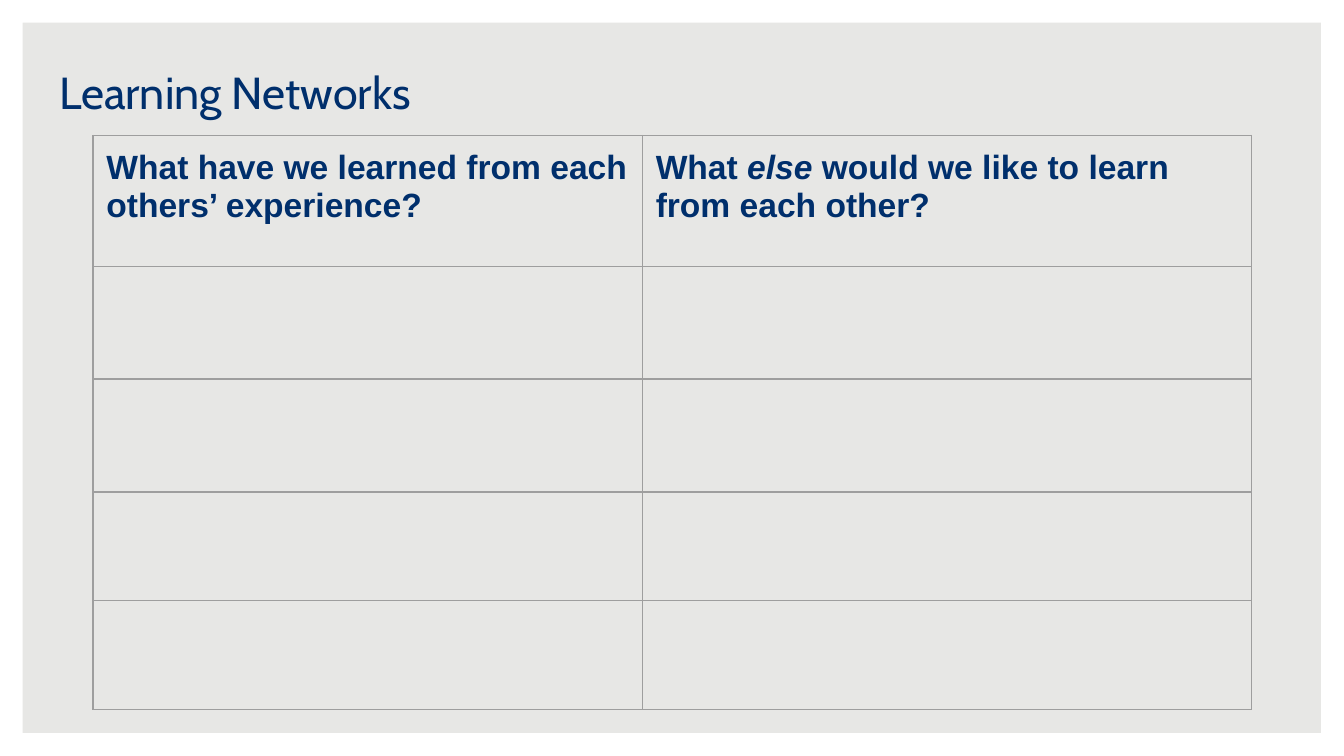
from dataclasses import dataclass

from lxml import etree
from pptx import Presentation
from pptx.dml.color import RGBColor
from pptx.enum.shapes import MSO_SHAPE
from pptx.enum.text import MSO_ANCHOR, MSO_AUTO_SIZE, PP_ALIGN
from pptx.oxml.ns import qn
from pptx.util import Pt

FRAME = MSO_SHAPE.FRAME
TOP = MSO_ANCHOR.TOP
LEFT = PP_ALIGN.LEFT
FIXED = MSO_AUTO_SIZE.NONE
WIDE, HIGH = 720, 405


@dataclass(frozen=True)
class Theme:
    back: str = "E7E7E5"
    edge: str = "FFFFFF"
    ink: str = "002F6C"
    rule: str = "9E9E9E"
    head: str = "Cabin"
    text: str = "Arial"
    large: float = 24
    small: float = 18
    inset: float = 7.2
    line: float = 0.75


def add_run(para, text, *, font, size, color, bold=False, italic=False):
    run = para.add_run()
    run.text = text
    run.font.name = font
    run.font.size = Pt(size)
    run.font.color.rgb = RGBColor.from_string(color)
    run.font.bold = bold
    run.font.italic = italic


class Page:
    def __init__(self, deck, theme):
        self.theme = theme
        self.slide = deck.slides.add_slide(deck.slide_layouts[5])
        fill = self.slide.background.fill
        fill.solid()
        fill.fore_color.rgb = RGBColor.from_string(theme.back)

    def pad(self, item):
        for side in ("left", "right", "top", "bottom"):
            setattr(item, f"margin_{side}", Pt(self.theme.inset))

    def frame(self, ratio):
        shape = self.slide.shapes.add_shape(FRAME, 0, 0, Pt(WIDE), Pt(HIGH))
        shape.adjustments[0] = ratio
        shape.shadow.inherit = False
        shape.fill.solid()
        shape.fill.fore_color.rgb = RGBColor.from_string(self.theme.edge)
        shape.line.fill.background()

    def title(self, text, left, top, width, height):
        shape = self.slide.shapes.title
        shape.left, shape.top = Pt(left), Pt(top)
        shape.width, shape.height = Pt(width), Pt(height)
        box = shape.text_frame
        box.auto_size = FIXED
        box.word_wrap = True
        box.vertical_anchor = TOP
        self.pad(box)
        para = box.paragraphs[0]
        para.alignment = LEFT
        add_run(para, text, font=self.theme.head, size=self.theme.large,
                color=self.theme.ink)

    def border(self, cell):
        props = cell._tc.get_or_add_tcPr()
        for spot, side in enumerate(("lnL", "lnR", "lnT", "lnB")):
            line = etree.Element(qn(f"a:{side}"), w=str(Pt(self.theme.line)))
            fill = etree.SubElement(line, qn("a:solidFill"))
            etree.SubElement(fill, qn("a:srgbClr"), val=self.theme.rule)
            props.insert(spot, line)

    def table(self, heads, left, top, cols, rows):
        grid = self.slide.shapes.add_table(
            len(rows), len(cols), Pt(left), Pt(top),
            Pt(sum(cols)), Pt(sum(rows))).table
        grid.first_row = grid.horz_banding = False
        for col, width in zip(grid.columns, cols):
            col.width = Pt(width)
        for row, height in zip(grid.rows, rows):
            row.height = Pt(height)
        for cell in grid.iter_cells():
            cell.fill.background()
            self.pad(cell)
            self.border(cell)
        for col, parts in enumerate(heads):
            para = grid.cell(0, col).text_frame.paragraphs[0]
            for text, slant in parts:
                add_run(para, text, font=self.theme.text,
                        size=self.theme.small, color=self.theme.ink,
                        bold=True, italic=slant)


def main():
    deck = Presentation()
    deck.slide_width, deck.slide_height = Pt(WIDE), Pt(HIGH)
    page = Page(deck, Theme())

    # Border and heading
    page.frame(0.03)
    page.title("Learning Networks", 24.5, 27.4, 671, 45.4)

    # Question grid with blank rows for answers
    heads = [
        [("What have we learned from each others’ experience?", False)],
        [("What ", False), ("else ", True),
         ("would we like to learn from each other?", False)],
    ]
    page.table(heads, 49.8, 72.6, cols=[294.3, 326.2],
               rows=[70, 60.5, 60.5, 58.2, 58.2])

    deck.save("out.pptx")


if __name__ == "__main__":
    main()
